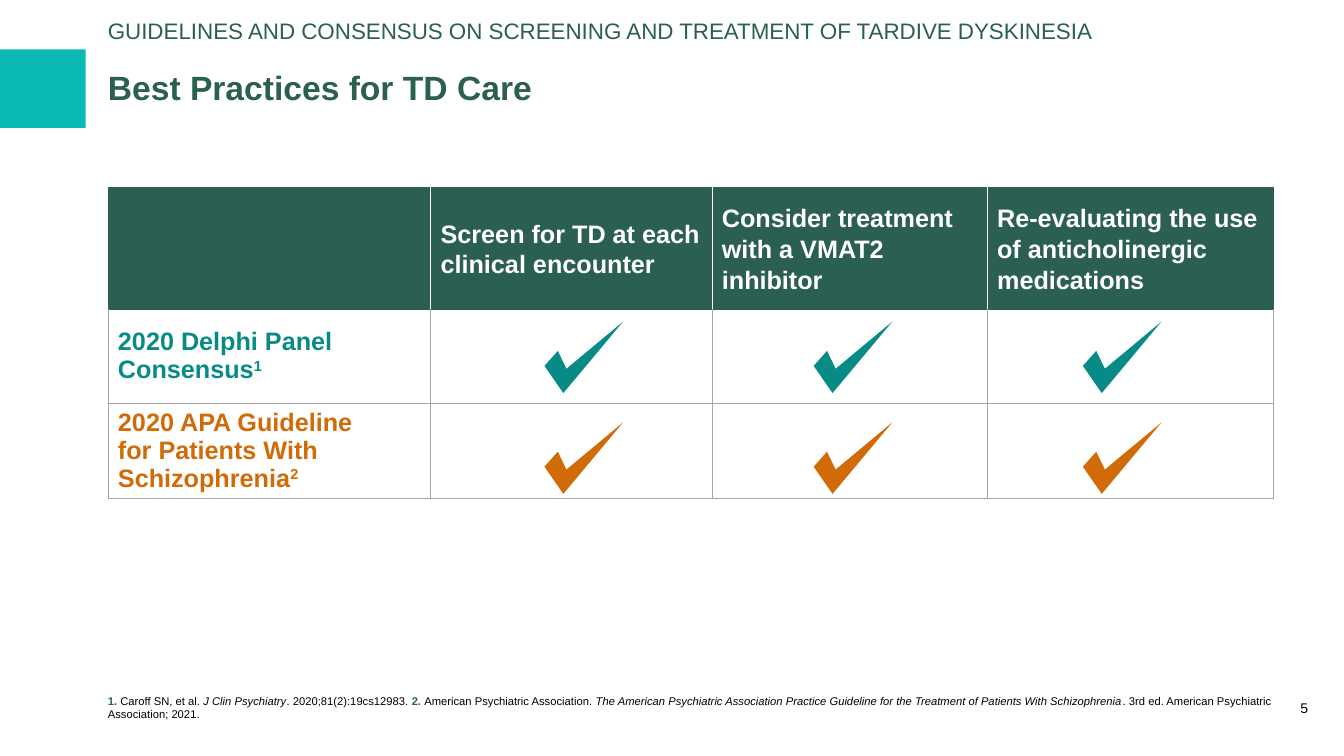
from itertools import accumulate, product

from lxml.etree import SubElement
from pptx import Presentation
from pptx.dml.color import RGBColor
from pptx.enum.shapes import MSO_SHAPE
from pptx.enum.text import MSO_ANCHOR, PP_ALIGN
from pptx.oxml.ns import qn
from pptx.util import Inches, Pt

COLORS = {"green": "2B5F51", "aqua": "0BBAB4", "teal": "088B87", "orange": "D06B08",
          "grey": "A6A6A6", "white": "FFFFFF", "black": "000000"}

SLIDE_W, SLIDE_H = 13.33, 7.5
LEFT, CONTENT_W, HEAD_W = 1.07, 11.56, 9.86
TABLE_TOP = 1.86
COLS = [3.2, 2.79, 2.73, 2.84]
ROWS = [1.21, 0.93, 0.94]
TICK_W, TICK_H = 0.78, 0.71
TICK_LEFT, TICK_COL = 5.4, 2.67
TICK_TOP, TICK_ROW = 3.19, 1.0
# Outline of a tick as shares of its width and height
TICK = [(0, 0.62), (0.17, 0.41), (0.28, 0.66), (1, 0), (0.24, 1)]

HEADERS = ["", "Screen for TD at each clinical encounter",
           "Consider treatment with a VMAT2 inhibitor",
           "Re-evaluating the use of anticholinergic medications"]
SOURCES = [("teal", ["2020 Delphi Panel Consensus"], "1"),
           ("orange", ["2020 APA Guideline", "for Patients With Schizophrenia"], "2")]

NUMBER = {"color": "green", "bold": True}
ITALIC = {"italic": True}
REFERENCES = [
    ("1. ", NUMBER), ("Caroff SN, et al. ", {}), ("J Clin Psychiatry", ITALIC),
    (". 2020;81(2):19cs12983. ", {}),
    ("2. ", NUMBER), ("American Psychiatric Association. ", {}),
    ("The American Psychiatric Association Practice Guideline for the Treatment "
     "of Patients With Schizophrenia", ITALIC),
    (". 3rd ed. American Psychiatric Association; 2021.", {}),
]


def rgb(name):
    return RGBColor.from_string(COLORS[name])


def box(*lengths):
    return [Inches(v) for v in lengths]


def apply(target, values):
    for name, value in values.items():
        setattr(target, name, value)


def add_run(p, text, size, color="black", superscript=False, **font):
    r = p.add_run()
    r.text = text
    apply(r.font, {"name": "Arial", "size": Pt(size), **font})
    r.font.color.rgb = rgb(color)
    if superscript:
        r.font._element.set("baseline", "30000")


def add_text(s, at, runs, size, anchor=MSO_ANCHOR.MIDDLE, **paragraph):
    """Add a text box without insets; runs are (text, font values) pairs."""
    tf = s.shapes.add_textbox(*box(*at)).text_frame
    apply(tf, {"word_wrap": True, "vertical_anchor": anchor, "margin_left": 0,
               "margin_right": 0, "margin_top": 0, "margin_bottom": 0})
    p = tf.paragraphs[0]
    apply(p, paragraph)
    for text, font in runs:
        add_run(p, text, size, **font)


def paint(sp, color):
    sp.shadow.inherit = False
    sp.fill.solid()
    sp.fill.fore_color.rgb = rgb(color)
    sp.line.fill.background()


def set_borders(cell, colors):
    """Draw thin cell borders; colors are for left, right, top and bottom."""
    for side, color in zip("LRTB", colors):
        ln = SubElement(cell._tc.get_or_add_tcPr(), qn(f"a:ln{side}"), w=str(Pt(0.25)))
        fill = SubElement(ln, qn("a:solidFill"))
        SubElement(fill, qn("a:srgbClr"), val=COLORS[color])


def border_colors(row, col):
    if row:
        return ["grey", "grey", "green" if row == 1 else "grey", "grey"]
    last = len(COLS) - 1
    return ["white" if col else "green", "white" if col < last else "green",
            "green", "green"]


def add_practice_table(s):
    frame = s.shapes.add_table(len(ROWS), len(COLS),
                               *box(LEFT, TABLE_TOP, sum(COLS), sum(ROWS)))
    table = frame.table
    for lines, sizes, side in ((table.columns, COLS, "width"), (table.rows, ROWS, "height")):
        for line, size in zip(lines, sizes):
            setattr(line, side, Inches(size))
    for row, col in product(range(len(ROWS)), range(len(COLS))):
        cell = table.cell(row, col)
        cell.vertical_anchor = MSO_ANCHOR.MIDDLE
        set_borders(cell, border_colors(row, col))
        cell.fill.solid()
        cell.fill.fore_color.rgb = rgb("white" if row else "green")

    for col, header in enumerate(HEADERS):
        if header:
            p = table.cell(0, col).text_frame.paragraphs[0]
            p.line_spacing = Pt(22)
            add_run(p, header, 18, "white", bold=True)
    for row, (color, lines, number) in enumerate(SOURCES, 1):
        p = table.cell(row, 0).text_frame.paragraphs[0]
        p.line_spacing = Pt(20)
        for i, line in enumerate(lines):
            if i:
                p.add_line_break()
            add_run(p, line, 18, color, bold=True)
        add_run(p, number, 18, color, superscript=True, bold=True)


def add_tick(s, left, top, color):
    points = [box(left + x * TICK_W, top + y * TICK_H) for x, y in TICK]
    builder = s.shapes.build_freeform(*points[0])
    builder.add_line_segments(points[1:], close=True)
    paint(builder.convert_to_shape(), color)


def main():
    prs = Presentation()
    prs.slide_width, prs.slide_height = box(SLIDE_W, SLIDE_H)
    s = prs.slides.add_slide(prs.slide_layouts[6])

    paint(s.shapes.add_shape(MSO_SHAPE.RECTANGLE, *box(0, 0.49, 0.85, 0.78)), "aqua")
    add_text(s, (LEFT, 0.39, HEAD_W, 0.99),
             [("Best Practices for TD Care", {"color": "green", "bold": True})],
             24, line_spacing=0.95)
    add_text(s, (LEFT, 0.18, HEAD_W, 0.28),
             [("GUIDELINES AND CONSENSUS ON SCREENING AND TREATMENT OF TARDIVE DYSKINESIA",
               {"color": "green"})], 16, line_spacing=0.95)

    add_practice_table(s)
    for col, (row, source) in product(range(len(COLS) - 1), enumerate(SOURCES)):
        add_tick(s, TICK_LEFT + col * TICK_COL, TICK_TOP + row * TICK_ROW, source[0])

    add_text(s, (LEFT, 6.7, CONTENT_W, 0.45), REFERENCES, 8, MSO_ANCHOR.BOTTOM)
    add_text(s, (12.77, 6.68, 0.33, 0.43), [("5", {})], 10, MSO_ANCHOR.BOTTOM,
             alignment=PP_ALIGN.CENTER, line_spacing=0.95)
    prs.save("out.pptx")


if __name__ == "__main__":
    main()
